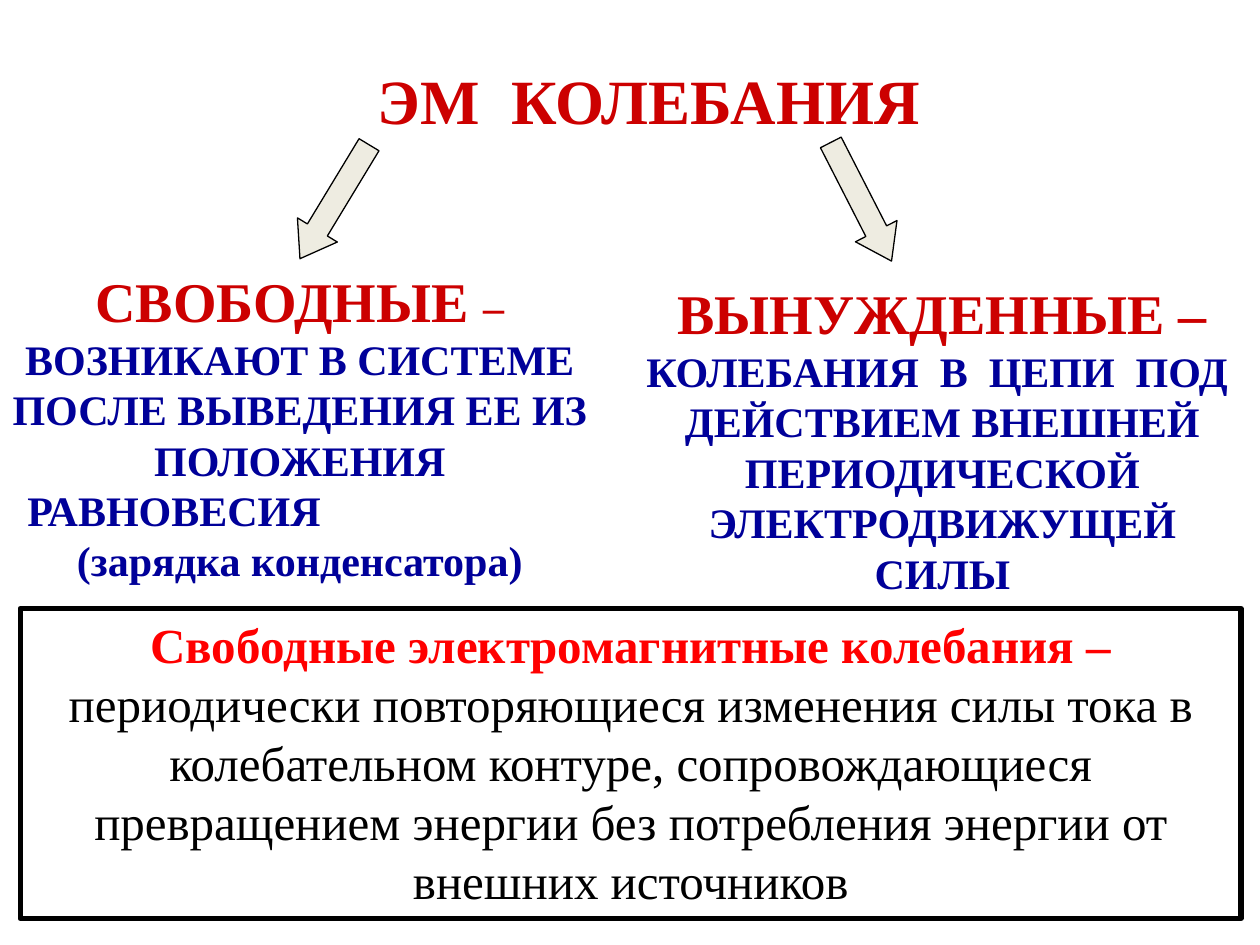
from dataclasses import dataclass

from pptx import Presentation
from pptx import util as u
from pptx.dml.color import RGBColor
from pptx.enum import shapes, text

WIDTH, HEIGHT = 10, 7.5


@dataclass(frozen=True)
class Theme:
    font: str = "Times New Roman"
    heading: str = "CC0000"
    body: str = "000099"
    term: str = "FF0000"
    ink: str = "000000"
    paper: str = "FFFFFF"
    arrow: str = "EEECE1"
    title_size: int = 36
    heading_size: int = 32
    definition_size: int = 28
    body_size: int = 24


THEME = Theme()


def place(x, y, w, h):
    """Turn shares of the slide's size into lengths."""
    return (u.Inches(x * WIDTH), u.Inches(y * HEIGHT),
            u.Inches(w * WIDTH), u.Inches(h * HEIGHT))


def add_run(p, words, size, color, bold=True):
    r = p.add_run()
    r.text = words
    r.font.name = THEME.font
    r.font.size = u.Pt(size)
    r.font.bold = bold
    r.font.color.rgb = RGBColor.from_string(color)


def write(tf, paragraphs, wrap=True):
    """Fill a frame with centred paragraphs, each a list of run formats."""
    tf.word_wrap = wrap
    tf.vertical_anchor = text.MSO_ANCHOR.TOP
    for i, runs in enumerate(paragraphs):
        p = tf.add_paragraph() if i else tf.paragraphs[0]
        p.alignment = text.PP_ALIGN.CENTER
        for run in runs:
            add_run(p, **run)
    return tf


def add_text(slide, box, paragraphs, wrap=True):
    sp = slide.shapes.add_textbox(*place(*box))
    return write(sp.text_frame, paragraphs, wrap)


def add_block(slide, kind, box, fill, line_width):
    sp = slide.shapes.add_shape(kind, *place(*box))
    sp.shadow.inherit = False
    sp.fill.solid()
    sp.fill.fore_color.rgb = RGBColor.from_string(fill)
    sp.line.color.rgb = RGBColor.from_string(THEME.ink)
    sp.line.width = u.Pt(line_width)
    return sp


def add_arrow(slide, x, angle):
    sp = add_block(slide, shapes.MSO_SHAPE.DOWN_ARROW,
                   (x, 0.143, 0.037, 0.141), THEME.arrow, 0.75)
    sp.adjustments[0], sp.adjustments[1] = 0.5, 0.72
    sp.rotation = angle


def main():
    prs = Presentation()
    prs.slide_width, prs.slide_height = u.Inches(WIDTH), u.Inches(HEIGHT)
    slide = prs.slides.add_slide(prs.slide_layouts[6])
    heading = dict(size=THEME.heading_size, color=THEME.heading)
    body = dict(size=THEME.body_size, color=THEME.body)

    # Title and the two branches
    add_text(slide, (0.216, 0.059, 0.598, 0.076),
             [[dict(words="ЭМ  КОЛЕБАНИЯ", size=THEME.title_size,
                    color=THEME.heading)]], wrap=False)
    add_arrow(slide, 0.247, 31.2)
    add_arrow(slide, 0.665, 332.9)

    # Free oscillations
    tf = add_text(slide, (0, 0.275, 0.476, 0.351), [
        [dict(words="СВОБОДНЫЕ ", **heading),
         dict(words="–", size=THEME.body_size, color=THEME.heading),
         dict(words=" ВОЗНИКАЮТ В СИСТЕМЕ ПОСЛЕ ВЫВЕДЕНИЯ ЕЕ ИЗ ПОЛОЖЕНИЯ",
              **body)],
        [dict(words="РАВНОВЕСИЯ", **body)],
        [dict(words="(зарядка конденсатора)", **body)],
    ])
    equilibrium = tf.paragraphs[1]
    equilibrium.alignment = text.PP_ALIGN.LEFT
    equilibrium._p.get_or_add_pPr().set("marL", str(u.Inches(0.12)))

    # Forced oscillations
    add_text(slide, (0.498, 0.288, 0.5, 0.351), [
        [dict(words="ВЫНУЖДЕННЫЕ –", **heading),
         dict(words=" КОЛЕБАНИЯ  В  ЦЕПИ  ПОД  ДЕЙСТВИЕМ ВНЕШНЕЙ "
                    "ПЕРИОДИЧЕСКОЙ ЭЛЕКТРОДВИЖУЩЕЙ СИЛЫ", **body)],
    ])

    # Framed definition
    frame = add_block(slide, shapes.MSO_SHAPE.RECTANGLE,
                      (0.016, 0.644, 0.969, 0.328), THEME.paper, 3)
    size = THEME.definition_size
    write(frame.text_frame, [
        [dict(words="Свободные электромагнитные колебания – ", size=size,
              color=THEME.term),
         dict(words="периодически повторяющиеся изменения силы тока в "
                    "колебательном контуре, сопровождающиеся превращением "
                    "энергии без потребления энергии от внешних источников",
              size=size, color=THEME.ink, bold=False)],
    ])

    prs.save("out.pptx")


if __name__ == "__main__":
    main()
